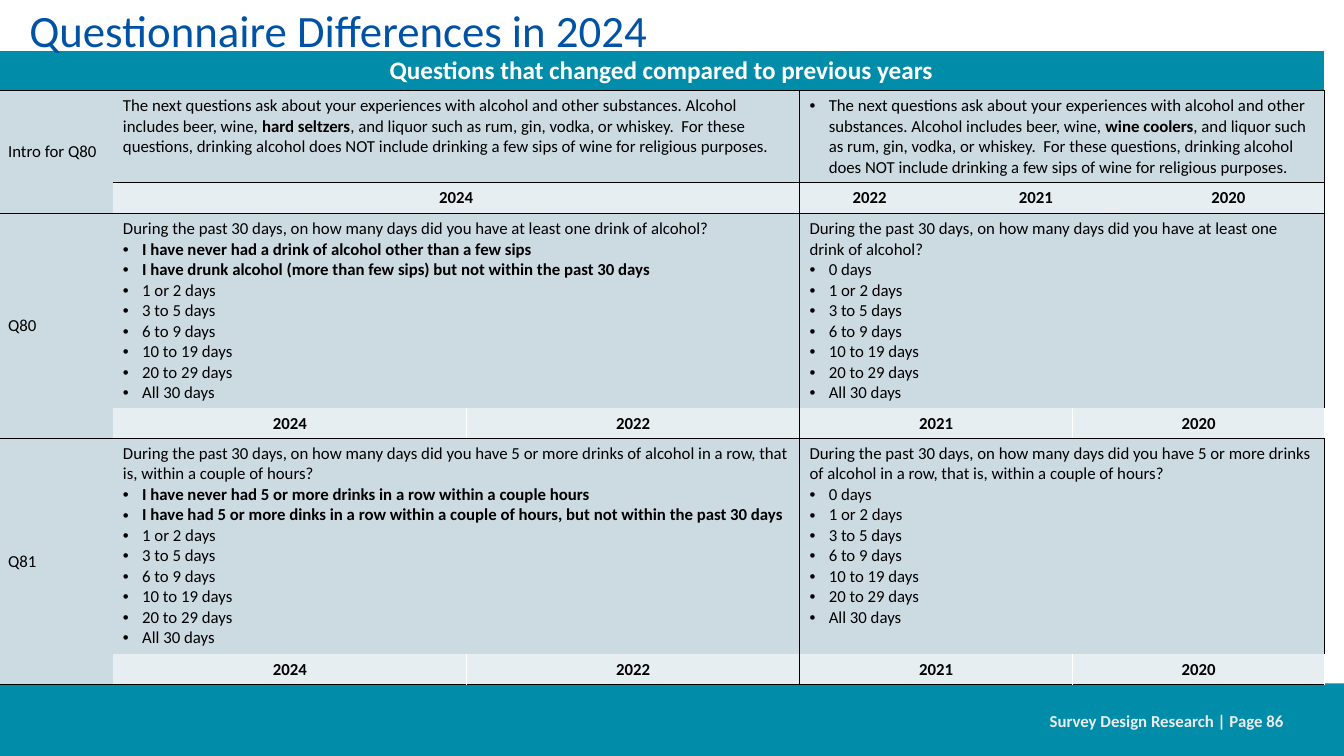
from lxml.etree import SubElement
from pptx import Presentation
from pptx.dml.color import RGBColor
from pptx.enum.shapes import MSO_SHAPE as Shape
from pptx.enum.text import MSO_ANCHOR as Anchor, MSO_AUTO_SIZE as AutoSize, PP_ALIGN as Align
from pptx.oxml.ns import qn
from pptx.util import Inches, Pt

FONT = "Calibri"
TEAL, PALE, PALER = "018CAA", "CCDAE2", "E7EEF1"
BLACK, WHITE = "000000", "FFFFFF"
NO_GRID_STYLE = "{2D5ABB26-0587-4C30-8999-92F81FD0307C}"
COLUMN_WIDTHS = [1.14, 3.51, 3.3, 1.39, 1.32, 0.59, 1.91]
ROW_HEIGHTS = [0.4, 0.91, 0.31, 1.93, 0.3, 2.14, 0.3]

INTRO = (
    "The next questions ask about your experiences with alcohol and other substances. "
    "Alcohol includes beer, wine, *{}*, and liquor such as rum, gin, vodka, or whiskey.  "
    "For these questions, drinking alcohol does NOT include drinking a few sips of wine "
    "for religious purposes."
)
DAYS = ["• 1 or 2 days", "• 3 to 5 days", "• 6 to 9 days",
        "• 10 to 19 days", "• 20 to 29 days", "• All 30 days"]
QUESTIONS = [
    ("Q80",
     "During the past 30 days, on how many days did you have at least one drink of alcohol?",
     ["• *I have never had a drink of alcohol other than a few sips*",
      "• *I have drunk alcohol (more than few sips) but not within the past 30 days*"]),
    ("Q81",
     "During the past 30 days, on how many days did you have 5 or more drinks of alcohol "
     "in a row, that is, within a couple of hours?",
     ["• *I have never had 5 or more drinks in a row within a couple hours*",
      "• *I have had 5 or more dinks in a row within a couple of hours, "
      "but not within the past 30 days*"]),
]


def rgb(color):
    return RGBColor.from_string(color)


def set_font(font, size, color, bold=False):
    font.name, font.size, font.bold = FONT, Pt(size), bold
    font.color.rgb = rgb(color)


def add_bullet(paragraph):
    properties = paragraph._p.get_or_add_pPr()
    properties.set("marL", str(Inches(0.19)))
    properties.set("indent", str(-Inches(0.19)))
    SubElement(properties, qn("a:buFont"), typeface="Arial")
    SubElement(properties, qn("a:buChar"), char="•")


def write_paragraph(paragraph, line, size=12, color=BLACK, align=Align.LEFT):
    paragraph.alignment = align
    if line.startswith("• "):
        add_bullet(paragraph)
        line = line[2:]
    pieces = [(text, index % 2 == 1) for index, text in enumerate(line.split("*")) if text]
    set_font(paragraph.font, size, color, all(bold for _, bold in pieces))
    for text, bold in pieces:
        run = paragraph.add_run()
        run.text = text
        if len(pieces) > 1:
            run.font.bold = bold


def draw_borders(cell, black, white):
    properties = cell._tc.get_or_add_tcPr()
    for side in "LRTB":
        line = SubElement(properties, qn(f"a:ln{side}"), w=str(Pt(1)))
        if side in black + white:
            fill = SubElement(line, qn("a:solidFill"))
            SubElement(fill, qn("a:srgbClr"), val=BLACK if side in black else WHITE)
        else:
            SubElement(line, qn("a:noFill"))


def fill_cell(table, row, column, lines, fill, span=(1, 1), black="LTB", white="",
              anchor=Anchor.TOP, **style):
    rows, columns = span
    for spanned_row in range(row, row + rows):
        for spanned_column in range(column, column + columns):
            draw_borders(table.cell(spanned_row, spanned_column), black, white)
    cell = table.cell(row, column)
    if span != (1, 1):
        cell.merge(table.cell(row + rows - 1, column + columns - 1))
    cell.fill.solid()
    cell.fill.fore_color.rgb = rgb(fill)
    cell.vertical_anchor = anchor
    frame = cell.text_frame
    for index, line in enumerate(lines):
        paragraph = frame.add_paragraph() if index else frame.paragraphs[0]
        write_paragraph(paragraph, line, **style)


def fill_label(table, row, label):
    fill_cell(table, row, 0, [label], PALE, (2, 1), anchor=Anchor.MIDDLE)


def fill_year(table, row, column, year, columns=1, black="LTB", white=""):
    fill_cell(table, row, column, [f"*{year}*"], PALER, (1, columns), black, white,
              align=Align.CENTER)


def fill_intro(table):
    fill_label(table, 1, "Intro for Q80")
    fill_cell(table, 1, 1, [INTRO.format("hard seltzers")], PALE, (1, 2), "TRB")
    fill_cell(table, 1, 3, ["• " + INTRO.format("wine coolers")], PALE, (1, 4), "LTRB")
    fill_year(table, 2, 1, 2024, 2, "TRB")
    fill_year(table, 2, 3, 2022)
    fill_year(table, 2, 4, 2021, 2, "TB")
    fill_year(table, 2, 6, 2020, 1, "TRB")


def fill_question(table, row, label, question, new_answers):
    fill_label(table, row, label)
    fill_cell(table, row, 1, [question, *new_answers, *DAYS], PALE, (1, 2), "TR")
    fill_cell(table, row, 3, [question, "• 0 days", *DAYS], PALE, (1, 4), "LTR")
    fill_year(table, row + 1, 1, 2024, 1, "B", "R")
    fill_year(table, row + 1, 2, 2022, 1, "RB", "L")
    fill_year(table, row + 1, 3, 2021, 2, "LB", "R")
    fill_year(table, row + 1, 5, 2020, 2, "B", "LR")


def add_question_table(slide):
    graphic = slide.shapes.add_table(
        len(ROW_HEIGHTS), len(COLUMN_WIDTHS), Inches(-0.02), Inches(0.5),
        Inches(sum(COLUMN_WIDTHS)), Inches(sum(ROW_HEIGHTS)))
    table = graphic.table
    table.first_row = table.horz_banding = False
    table._tbl.tblPr.find(qn("a:tableStyleId")).text = NO_GRID_STYLE
    for column, width in zip(table.columns, COLUMN_WIDTHS):
        column.width = Inches(width)
    for row, height in zip(table.rows, ROW_HEIGHTS):
        row.height = Inches(height)
    fill_cell(table, 0, 0, ["*Questions that changed compared to previous years*"], TEAL,
              (1, 7), "B", "LTR", size=18, color=WHITE, align=Align.CENTER)
    fill_intro(table)
    for index, question in enumerate(QUESTIONS):
        fill_question(table, 3 + 2 * index, *question)


def add_footer(slide):
    band = slide.shapes.add_shape(
        Shape.RECTANGLE, Inches(0), Inches(6.78), Inches(13.33), Inches(0.72))
    band.shadow.inherit = False
    band.fill.solid()
    band.fill.fore_color.rgb = rgb(TEAL)
    band.line.fill.background()
    box = slide.shapes.add_textbox(Inches(10.21), Inches(6.95), Inches(2.62), Inches(0.4))
    frame = box.text_frame
    frame.word_wrap = True
    frame.vertical_anchor = Anchor.MIDDLE
    write_paragraph(frame.paragraphs[0], "*Survey Design Research | Page 86*",
                    color="EBECEE", align=Align.RIGHT)


def place_title(slide):
    title = slide.shapes.title
    title.left, title.top = Inches(0.19), Inches(0)
    title.width, title.height = Inches(12.98), Inches(0.66)
    frame = title.text_frame
    frame.auto_size = AutoSize.NONE
    frame.vertical_anchor = Anchor.MIDDLE
    paragraph = frame.paragraphs[0]
    paragraph.line_spacing = 0.9
    write_paragraph(paragraph, "Questionnaire Differences in 2024", 32, "0052A5")
    slide.shapes.element.append(title.element)


def main():
    presentation = Presentation()
    presentation.slide_width, presentation.slide_height = Inches(13.33), Inches(7.5)
    slide = presentation.slides.add_slide(presentation.slide_layouts[5])
    add_footer(slide)
    add_question_table(slide)
    place_title(slide)
    presentation.save("out.pptx")


if __name__ == "__main__":
    main()
